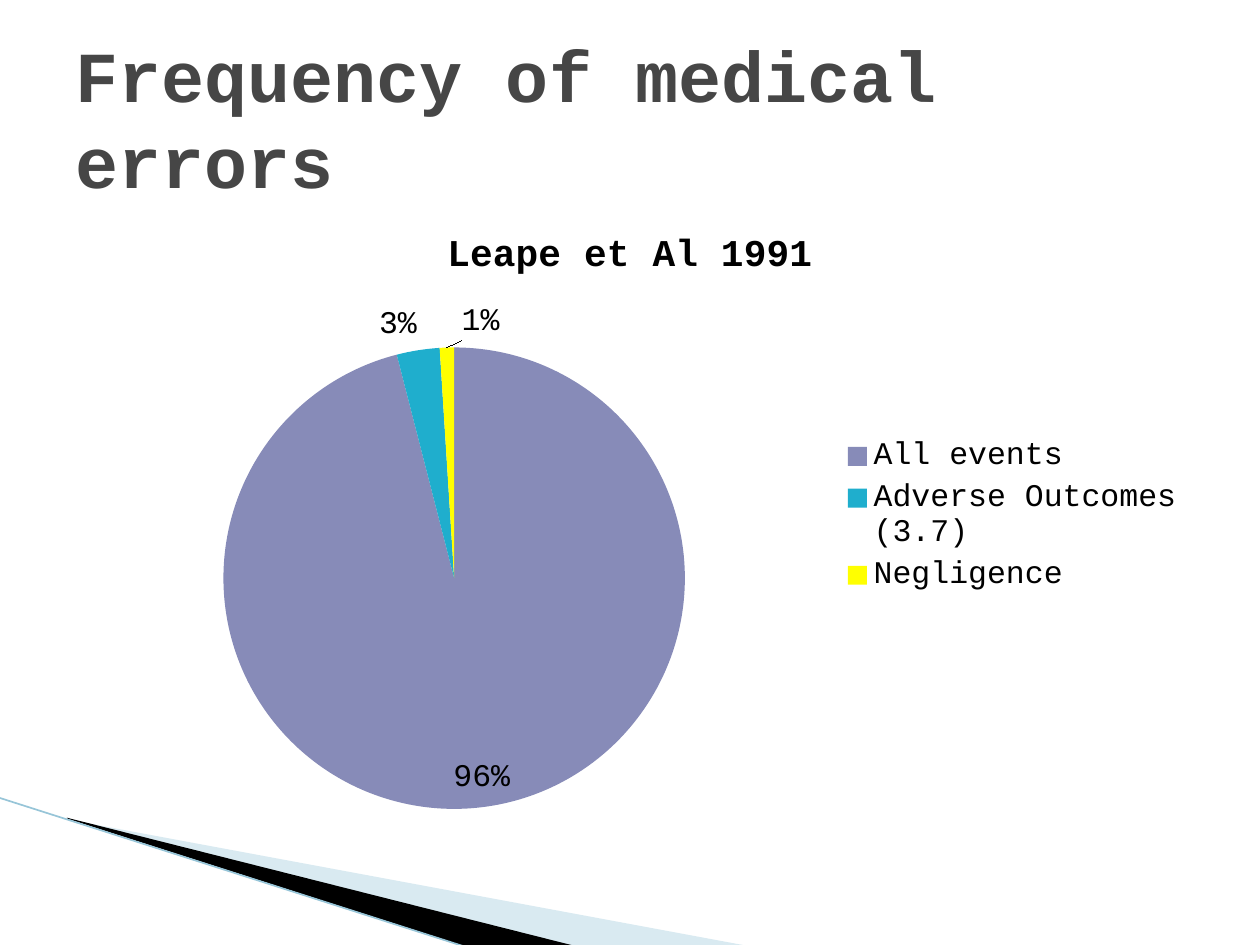
from typing import NamedTuple

from lxml import etree
from pptx import Presentation
from pptx import util as u
from pptx.chart.data import CategoryChartData
from pptx.dml.color import RGBColor
from pptx.enum import chart as ch
from pptx.enum import shapes, text
from pptx.oxml import ns

GREY = RGBColor(0x46, 0x46, 0x46)
BLACK = RGBColor(0, 0, 0)
PALE_BLUE = RGBColor(0xD9, 0xEA, 0xF1)
LINE_BLUE = RGBColor(0x97, 0xC5, 0xD8)
LAVENDER = RGBColor(0x87, 0x8B, 0xB8)
TEAL = RGBColor(0x1F, 0xAE, 0xCD)
YELLOW = RGBColor(0xFF, 0xFF, 0)
FONT = "Courier New"


class Wedge(NamedTuple):
    corners: list[tuple[float, float]]
    fill: RGBColor


class Slice(NamedTuple):
    label: str
    percent: int
    fill: RGBColor


WEDGES = [
    Wedge([(39.6, 468.5), (428.4, 540.7), (328.3, 540.7), (39.6, 468)], PALE_BLUE),
    Wedge([(38.2, 467.3), (329, 540.7), (267.8, 541.4), (38.9, 468)], BLACK),
]
SLICES = [
    Slice("All events", 96, LAVENDER),
    Slice("Adverse Outcomes (3.7)", 3, TEAL),
    Slice("Negligence", 1, YELLOW),
]


def write(frame, content: str, *, size: float, color: RGBColor, bold: bool = False,
          align=None) -> None:
    paragraph = frame.paragraphs[0]
    paragraph.alignment = align
    run = paragraph.add_run()
    run.text = content
    run.font.name = FONT
    run.font.size = u.Pt(size)
    run.font.bold = bold
    run.font.color.rgb = color


def draw_wedge(slide, wedge: Wedge) -> None:
    points = [(u.Pt(x), u.Pt(y)) for x, y in wedge.corners]
    builder = slide.shapes.build_freeform(*points[0], scale=1.0)
    builder.add_line_segments(points[1:], close=True)
    shape = builder.convert_to_shape()
    shape.shadow.inherit = False
    shape.fill.solid()
    shape.fill.fore_color.rgb = wedge.fill
    shape.line.fill.background()


def draw_edge(slide) -> None:
    edge = slide.shapes.add_connector(
        shapes.MSO_CONNECTOR.STRAIGHT, u.Pt(-0.7), u.Pt(455.8), u.Pt(267.1), u.Pt(541.4))
    edge.line.color.rgb = LINE_BLUE
    edge.line.width = u.Pt(0.95)
    etree.SubElement(edge._element.spPr, ns.qn("a:effectLst"))


def manual_layout(values: dict[str, str]):
    layout = etree.Element(ns.qn("c:layout"))
    manual = etree.SubElement(layout, ns.qn("c:manualLayout"))
    for tag, value in values.items():
        etree.SubElement(manual, ns.qn(f"c:{tag}")).set("val", value)
    return layout


def draw_pie(slide, title: str, slices: list[Slice]) -> None:
    data = CategoryChartData()
    data.categories = [part.label for part in slices]
    data.add_series(title, [part.percent for part in slices])
    chart = slide.shapes.add_chart(
        ch.XL_CHART_TYPE.PIE, u.Pt(36), u.Pt(116.6), u.Pt(648), u.Pt(356.4), data).chart
    chart.font.name = FONT
    chart.font.size = u.Pt(18)
    chart.font.color.rgb = BLACK
    chart.has_title = True
    write(chart.chart_title.text_frame, title, size=21.6, color=BLACK, bold=True)
    chart.chart_title.include_in_layout = False
    chart.has_legend = True
    chart.legend.position = ch.XL_LEGEND_POSITION.RIGHT
    chart.legend.include_in_layout = False

    plot = chart.plots[0]
    plot.vary_by_categories = True
    series = plot.series[0]
    labels = series.data_labels
    labels.show_percentage = True
    labels.show_value = False
    labels.number_format = "0%"
    labels.number_format_is_linked = False
    labels.position = ch.XL_LABEL_POSITION.BEST_FIT
    for index, part in enumerate(slices):
        fill = series.points[index].format.fill
        fill.solid()
        fill.fore_color.rgb = part.fill

    series.points[2].data_label.position = ch.XL_LABEL_POSITION.BEST_FIT
    shifted = labels._element.find(ns.qn("c:dLbl"))
    shifted.find(ns.qn("c:idx")).addnext(manual_layout({"x": "0.03", "y": "0"}))
    shifted.find(ns.qn("c:showVal")).set("val", "0")
    shifted.find(ns.qn("c:showPercent")).set("val", "1")

    area = chart._chartSpace.chart.plotArea
    for old in area.findall(ns.qn("c:layout")):
        area.remove(old)
    area.insert(0, manual_layout({
        "layoutTarget": "inner", "xMode": "edge", "yMode": "edge",
        "x": "0.14", "y": "0.23", "w": "0.41", "h": "0.74"}))


def main() -> None:
    deck = Presentation()
    deck.slide_width, deck.slide_height = u.Pt(720), u.Pt(540)
    slide = deck.slides.add_slide(deck.slide_layouts[5])

    for wedge in WEDGES:
        draw_wedge(slide, wedge)
    draw_edge(slide)
    draw_pie(slide, "Leape et Al 1991", SLICES)

    heading = slide.shapes.title
    heading.left, heading.top = u.Pt(36), u.Pt(21.6)
    heading.width, heading.height = u.Pt(648), u.Pt(90)
    heading.text_frame.vertical_anchor = text.MSO_ANCHOR.MIDDLE
    heading.text_frame.auto_size = text.MSO_AUTO_SIZE.NONE
    write(heading.text_frame, "Frequency of medical errors", size=41, color=GREY,
          bold=True, align=text.PP_ALIGN.LEFT)

    deck.save("out.pptx")


if __name__ == "__main__":
    main()
